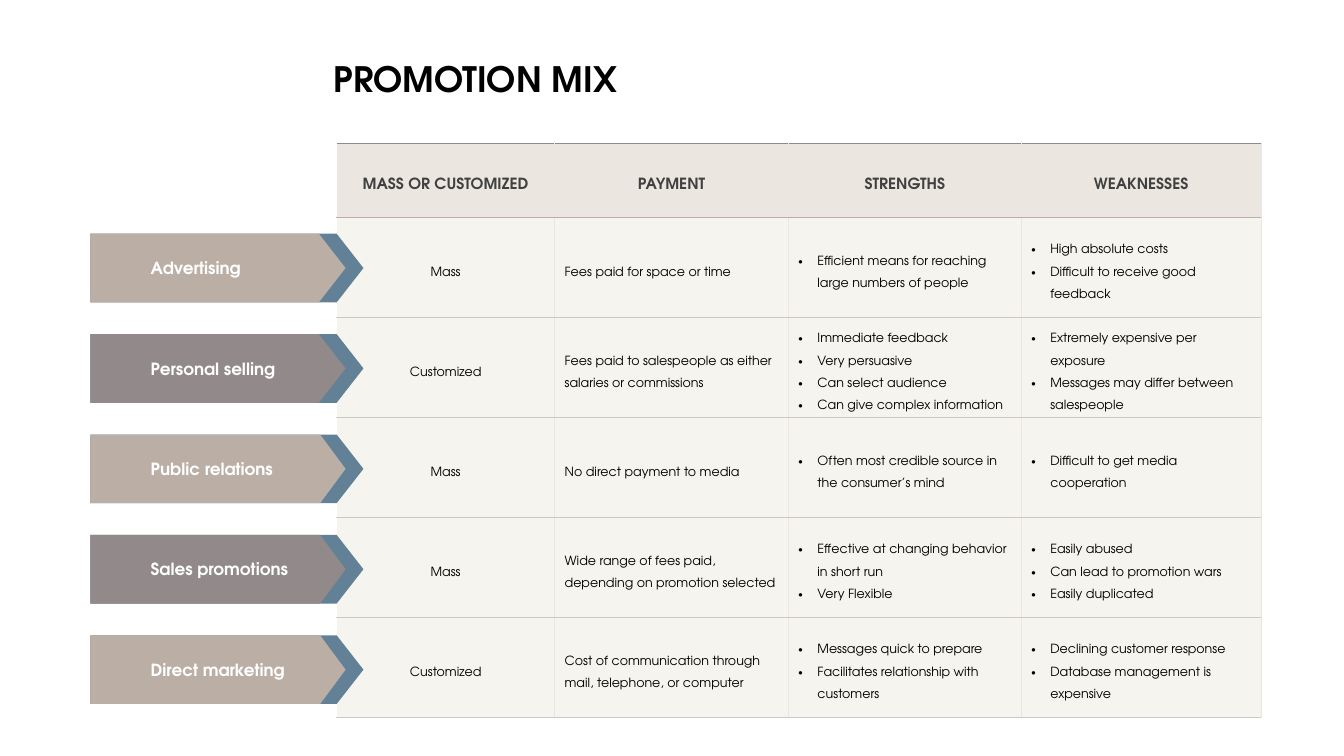
"""Build the promotion mix slide: a table of methods with arrow labels."""
from dataclasses import dataclass

from lxml.etree import SubElement
from pptx import Presentation
from pptx.dml.color import RGBColor as Rgb
from pptx.enum.shapes import MSO_SHAPE as Shape
from pptx.enum.text import MSO_ANCHOR as Anchor, MSO_AUTO_SIZE as Auto, PP_ALIGN as Align
from pptx.oxml.ns import qn
from pptx.util import Cm, Pt

FONT = "TeX Gyre Adventor"
BLACK = Rgb(0x00, 0x00, 0x00)
WHITE = Rgb(0xFF, 0xFF, 0xFF)
DARK = Rgb(0x40, 0x40, 0x40)
BLUE = Rgb(0x62, 0x81, 0x96)
TAN = Rgb(0xBB, 0xAE, 0xA5)
MAUVE = Rgb(0x92, 0x89, 0x8A)
SAND = Rgb(0xEB, 0xE6, 0xE0)
CREAM = Rgb(0xF5, 0xF4, 0xEF)
RULE = Rgb(0xCF, 0xC7, 0xC3)

HEADS = ("MASS OR CUSTOMIZED", "PAYMENT", "STRENGTHS", "WEAKNESSES")
WIDTHS = (5.5, 5.89, 5.87, 6.04)
HEAD_H, ROW_H = 1.87, 2.52
LEFT, TOP = 8.48, 3.61
TAB_X, TAB_Y, TAB_H, TAB_STEP = 2.28, 5.89, 1.73, 2.53


@dataclass(frozen=True)
class Method:
    """One promotion method: its label and table row."""
    name: str
    color: Rgb
    tip: float
    reach: str
    pay: str
    pros: tuple[str, ...]
    cons: tuple[str, ...]


METHODS = (
    Method("Advertising", TAN, 0.39, "Mass", "Fees paid for space or time",
           ("Efficient means for reaching large numbers of people",),
           ("High absolute costs", "Difficult to receive good feedback")),
    Method("Personal selling", MAUVE, 0.39, "Customized",
           "Fees paid to salespeople as either salaries or commissions",
           ("Immediate feedback", "Very persuasive", "Can select audience",
            "Can give complex information"),
           ("Extremely expensive per exposure",
            "Messages may differ between salespeople")),
    Method("Public relations", TAN, 0.37, "Mass", "No direct payment to media",
           ("Often most credible source in the consumer’s mind",),
           ("Difficult to get media cooperation",)),
    Method("Sales promotions", MAUVE, 0.37, "Mass",
           "Wide range of fees paid, depending on promotion selected",
           ("Effective at changing behavior in short run", "Very Flexible"),
           ("Easily abused", "Can lead to promotion wars", "Easily duplicated")),
    Method("Direct marketing", TAN, 0.37, "Customized",
           "Cost of communication through mail, telephone, or computer",
           ("Messages quick to prepare", "Facilitates relationship with customers"),
           ("Declining customer response", "Database management is expensive")),
)


def style(para, size: float, color: Rgb, bold: bool) -> None:
    """Set the font of a paragraph."""
    font = para.font
    font.name, font.size, font.bold = FONT, Pt(size), bold
    font.color.rgb = color


def edge(cell, side: str, color: Rgb, width: float = 0.5) -> None:
    """Draw one border of a cell."""
    props = cell._tc.get_or_add_tcPr()
    line = SubElement(props, qn(f"a:ln{side}"), w=str(Pt(width)))
    fill = SubElement(line, qn("a:solidFill"))
    SubElement(fill, qn("a:srgbClr"), val=str(color))


def bullet(para) -> None:
    """Give a paragraph a hanging bullet."""
    props = para._p.get_or_add_pPr()
    props.set("marL", str(Cm(0.48)))
    props.set("indent", str(Cm(-0.48)))
    SubElement(props, qn("a:buFont"), typeface="Arial")
    SubElement(props, qn("a:buChar"), char="•")


def fill_cell(cell, row: int, col: int, lines: tuple[str, ...]) -> None:
    """Write and format one table cell."""
    head = row == 0
    if col:
        edge(cell, "L", SAND)
    edge(cell, "R", SAND)
    edge(cell, "T", MAUVE if head else TAN if row == 1 else RULE, 1 if head else 0.5)
    edge(cell, "B", TAN if head else RULE)
    cell.fill.solid()
    cell.fill.fore_color.rgb = SAND if head else CREAM
    cell.vertical_anchor = Anchor.MIDDLE
    cell.margin_left = cell.margin_right = Cm(0.13 if head else 0.25)
    cell.margin_top = cell.margin_bottom = Cm(0.13)
    cell.text = "\n".join(lines)
    for para in cell.text_frame.paragraphs:
        para.alignment = Align.CENTER if head or col == 0 else Align.LEFT
        para.line_spacing = Pt(17 if head else 16)
        style(para, 11 if head else 9, DARK if head else BLACK, head)
        if not head and col > 1:
            bullet(para)


def add_grid(slide) -> None:
    """Draw the table."""
    rows = [[(head,) for head in HEADS]]
    rows += [[(m.reach,), (m.pay,), m.pros, m.cons] for m in METHODS]
    high = HEAD_H + ROW_H * len(METHODS)
    grid = slide.shapes.add_table(len(rows), len(HEADS), Cm(LEFT), Cm(TOP),
                                  Cm(sum(WIDTHS)), Cm(high)).table
    grid.first_row = grid.horz_banding = False
    for col, width in zip(grid.columns, WIDTHS):
        col.width = Cm(width)
    for r, row in enumerate(rows):
        grid.rows[r].height = Cm(ROW_H if r else HEAD_H)
        for c, lines in enumerate(row):
            fill_cell(grid.cell(r, c), r, c, lines)


def add_arrow(slide, top: float, width: float, color: Rgb, tip: float):
    """Draw one pentagon arrow."""
    arrow = slide.shapes.add_shape(Shape.PENTAGON, Cm(TAB_X), Cm(top),
                                   Cm(width), Cm(TAB_H))
    arrow.adjustments[0] = tip
    arrow.shadow.inherit = False
    arrow.fill.solid()
    arrow.fill.fore_color.rgb = color
    arrow.line.fill.background()
    return arrow


def add_label(slide, top: float, method: Method) -> None:
    """Draw a method name on its double arrow."""
    add_arrow(slide, top, 6.88, BLUE, 0.39)
    frame = add_arrow(slide, top, 6.43, method.color, method.tip).text_frame
    frame.word_wrap = True
    frame.vertical_anchor = Anchor.MIDDLE
    frame.margin_left, frame.margin_right = Cm(1.52), Cm(0.25)
    frame.margin_top = frame.margin_bottom = Cm(0.13)
    frame.text = method.name
    para = frame.paragraphs[0]
    para.alignment = Align.LEFT
    style(para, 12, WHITE, True)


def add_title(slide) -> None:
    """Place the slide title."""
    title = slide.shapes.title
    title.left, title.top, title.width, title.height = Cm(8.15), Cm(1.32), Cm(8.56), Cm(1.32)
    frame = title.text_frame
    frame.text = "PROMOTION MIX"
    frame.auto_size = Auto.SHAPE_TO_FIT_TEXT
    frame.vertical_anchor = Anchor.TOP
    para = frame.paragraphs[0]
    para.alignment = Align.LEFT
    style(para, 25, BLACK, True)


def main() -> None:
    """Build and save the slide."""
    deck = Presentation()
    deck.slide_width, deck.slide_height = Cm(33.87), Cm(19.05)
    slide = deck.slides.add_slide(deck.slide_layouts[5])
    add_title(slide)
    add_grid(slide)
    for i, method in enumerate(METHODS):
        add_label(slide, TAB_Y + i * TAB_STEP, method)
    deck.save("out.pptx")


if __name__ == "__main__":
    main()
